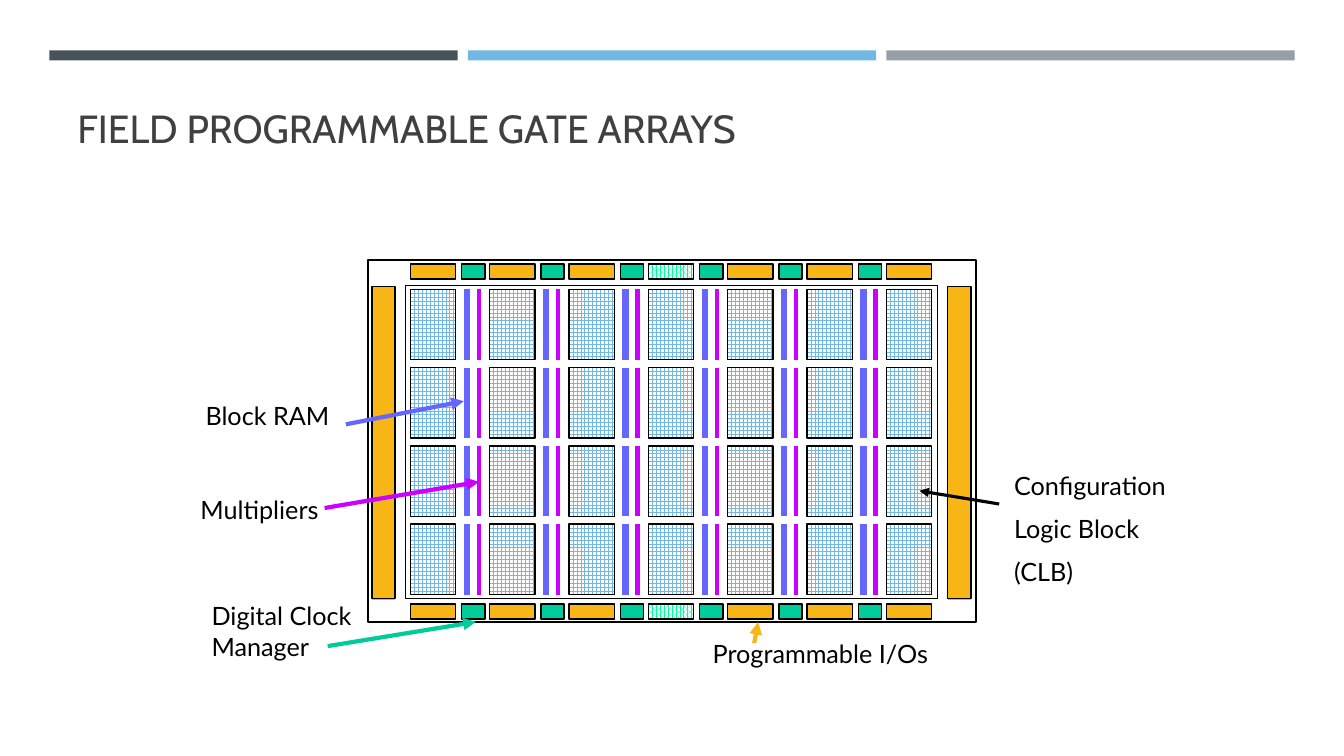
from lxml import etree
from pptx import Presentation, util as u
from pptx.dml.color import RGBColor
from pptx.enum import dml, shapes, text
from pptx.oxml.ns import qn

HUES = {
    "slate": "465359", "sky": "71B9E4", "grey": "969FA7", "title": "404040",
    "black": "000000", "white": "FFFFFF", "ram": "6666FF", "mult": "CC00FF",
    "clock": "00CC99", "port": "F7B615", "mint": "00FF99",
}
PAT = dml.MSO_PATTERN
COLS, ROWS = 7, 4


def hue(name):
    return RGBColor.from_string(HUES[name])


def add_rect(parts, box, fill=None, weave=None, edge="black"):
    """Add a rectangle that is plain, patterned (weave) or unfilled."""
    rect = parts.add_shape(shapes.MSO_SHAPE.RECTANGLE, *map(u.Inches, box))
    rect.shadow.inherit = False
    if weave:
        rect.fill.patterned()
        rect.fill.pattern = weave
        rect.fill.fore_color.rgb = hue(fill)
        rect.fill.back_color.rgb = hue("white")
    elif fill:
        rect.fill.solid()
        rect.fill.fore_color.rgb = hue(fill)
    else:
        rect.fill.background()
    if edge:
        rect.line.color.rgb = hue(edge)
        rect.line.width = u.Pt(1)
    else:
        rect.line.fill.background()


def add_line(parts, start, end, tint, width, head=False):
    line = parts.add_connector(shapes.MSO_CONNECTOR.STRAIGHT,
                               *map(u.Inches, (*start, *end)))
    line.line.color.rgb = hue(tint)
    line.line.width = u.Pt(width)
    if head:
        etree.SubElement(line.line._get_or_add_ln(), qn("a:tailEnd"), type="triangle")
    etree.SubElement(line._element.spPr, qn("a:effectLst"))


def add_text(parts, box, lines, size=18, font="Lato", tint="black", low=False):
    frame = parts.add_textbox(*map(u.Inches, box)).text_frame
    frame.word_wrap = True
    frame.vertical_anchor = text.MSO_ANCHOR.BOTTOM if low else text.MSO_ANCHOR.TOP
    for i, words in enumerate(lines):
        para = frame.paragraphs[0] if i == 0 else frame.add_paragraph()
        if i:
            para.space_before = u.Pt(size / 2)
        run = para.add_run()
        run.text = words
        run.font.size = u.Pt(size)
        run.font.name = font
        run.font.color.rgb = hue(tint)


def add_head(parts, x, y, wide):
    """Three colour bars across the top, with the title below."""
    gap = 0.1
    bar = (wide - 2 * gap) / 3
    for i, tint in enumerate(("slate", "sky", "grey")):
        add_rect(parts, (x + i * (bar + gap), y, bar, 0.1), tint, edge=None)
    add_text(parts, (x + 0.18, y - 0.37, 11, 1.42),
             ["FIELD PROGRAMMABLE GATE ARRAYS"], 28, "Cabin", "title", low=True)


def add_core(parts, x, y, step):
    """Grid of logic blocks, with memory and multiplier strips between columns."""
    drop, tall = 2.33 / 3, 0.7
    for row in range(ROWS):
        top = y + row * drop
        for col in range(COLS):
            left = x + col * step
            add_rect(parts, (left, top, 0.45, tall), "sky", PAT.LARGE_GRID)
            if col < COLS - 1:
                for shift, tint, width in ((0.56, "ram", 4.5), (0.68, "mult", 3)):
                    spot = left + shift
                    add_line(parts, (spot, top), (spot, top + tall), tint, width)


def add_ports(parts, x, y, step):
    """One row of ports, with clock managers between them."""
    for col in range(COLS):
        left = x + col * step
        if col == COLS // 2:
            add_rect(parts, (left, y, 0.45, 0.15), "mint", PAT.PERCENT_75)
        else:
            add_rect(parts, (left, y, 0.45, 0.15), "port", PAT.DARK_VERTICAL)
        if col < COLS - 1:
            add_rect(parts, (left + 0.51, y, 0.23, 0.15), "clock")


def add_chip(parts, x, y, wide, tall):
    chip = parts.add_group_shape().shapes
    step = 4.72 / 6
    add_rect(chip, (x, y, wide, tall))
    add_rect(chip, (x + 0.37, y + 0.25, 5.28, 3.11))
    add_core(chip, x + 0.42, y + 0.29, step)
    for top in (y + 0.04, y + tall - 0.18):
        add_ports(chip, x + 0.42, top, step)
    for left in (x + 0.04, x + wide - 0.28):
        add_rect(chip, (left, y + 0.26, 0.23, 3.1), "port", PAT.DARK_HORIZONTAL)


def add_notes(parts, x, y):
    """Labels and their arrows, placed from the chip's top left corner."""
    labels = (
        ((6.31, 2.04, 1.71, 1.3), ["Configuration", "Logic Block", "(CLB)"]),
        ((-1.71, 1.34, 1.53, 0.4), ["Block RAM"]),
        ((-1.76, 2.27, 1.64, 0.4), ["Multipliers"]),
        ((3.32, 3.7, 2.38, 0.4), ["Programmable I/Os"]),
        ((-1.65, 3.33, 1.69, 0.7), ["Digital Clock Manager"]),
    )
    arrows = (
        ((-0.22, 1.63), (0.95, 1.4), "ram", 3),
        ((-0.43, 2.46), (1.1, 2.2), "mult", 3),
        ((3.83, 3.8), (3.87, 3.59), "port", 3),
        ((-0.4, 3.83), (1.07, 3.59), "clock", 3),
        ((6.26, 2.42), (5.47, 2.29), "black", 2.25),
    )
    for (left, top, wide, tall), lines in labels:
        add_text(parts, (x + left, y + top, wide, tall), lines)
    for (ax, ay), (bx, by), tint, width in arrows:
        add_line(parts, (x + ax, y + ay), (x + bx, y + by), tint, width, head=True)


def main():
    deck = Presentation()
    deck.slide_width, deck.slide_height = u.Inches(13.33), u.Inches(7.5)
    parts = deck.slides.add_slide(deck.slide_layouts[6]).shapes
    add_head(parts, 0.49, 0.5, 12.35)
    add_chip(parts, 3.65, 2.58, 6.03, 3.59)
    add_notes(parts, 3.65, 2.58)
    deck.save("out.pptx")


if __name__ == "__main__":
    main()
